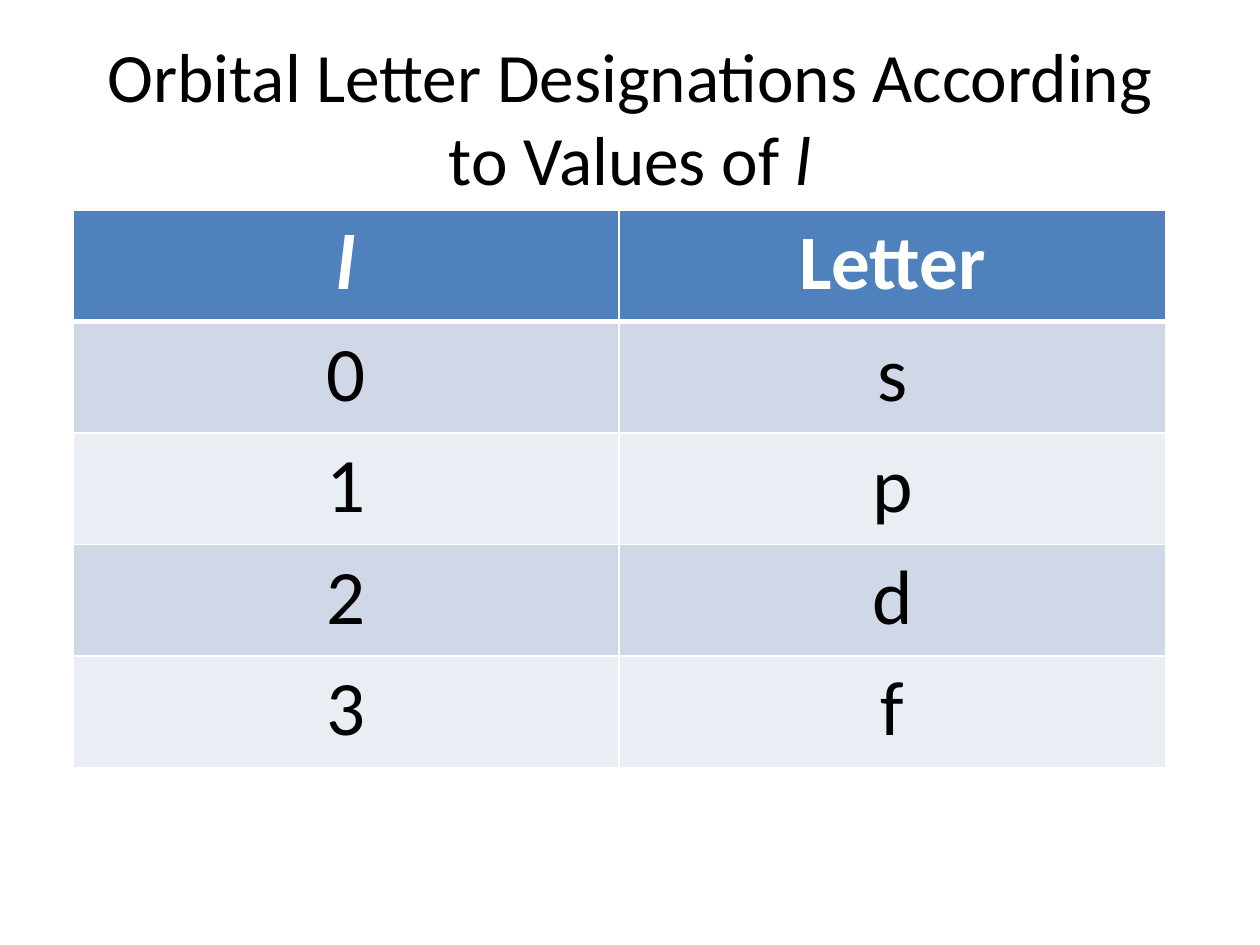
from lxml import etree
from pptx import Presentation
from pptx import util as u
from pptx.dml.color import RGBColor
from pptx.enum import text
from pptx.oxml import ns

WHITE, BLACK, BLUE = "FFFFFF", "000000", "4F81BD"
BANDS = ("D0D8E8", "E9EDF4")
ROWS = [("l", "Letter"), ("0", "s"), ("1", "p"), ("2", "d"), ("3", "f")]


def rgb(value):
    return RGBColor.from_string(value)


def add_text(p, content, size=44, color=BLACK, bold=False, italic=False):
    p.alignment = text.PP_ALIGN.CENTER
    r = p.add_run()
    r.text = content
    r.font.name = "Calibri"
    r.font.size = u.Pt(size)
    r.font.color.rgb = rgb(color)
    r.font.bold = bold
    r.font.italic = italic


def set_borders(cell, color, **widths):
    """Draw the sides L, R, T and B, given in that order, in points."""
    tc_pr = cell._tc.get_or_add_tcPr()
    for i, (side, width) in enumerate(widths.items()):
        ln = etree.Element(ns.qn(f"a:ln{side}"), w=str(u.Pt(width)))
        fill = etree.SubElement(ln, ns.qn("a:solidFill"))
        etree.SubElement(fill, ns.qn("a:srgbClr"), val=color)
        tc_pr.insert(i, ln)


def place_title(s, x, y, w, h):
    title = s.shapes.title
    title.left, title.top, title.width, title.height = x, y, w, h
    tf = title.text_frame
    tf.word_wrap = True
    tf.auto_size = text.MSO_AUTO_SIZE.NONE
    tf.vertical_anchor = text.MSO_ANCHOR.MIDDLE
    p = tf.paragraphs[0]
    add_text(p, "Orbital Letter Designations According to Values of ", size=39.6)
    add_text(p, "l", size=39.6, italic=True)


def place_orbital_table(s, x, y, w, h):
    table = s.shapes.add_table(len(ROWS), len(ROWS[0]), x, y, w, h).table
    for i, row in enumerate(ROWS):
        header = i == 0
        for j, content in enumerate(row):
            cell = table.cell(i, j)
            cell.fill.solid()
            cell.fill.fore_color.rgb = rgb(BLUE if header else BANDS[(i - 1) % 2])
            set_borders(cell, WHITE, L=1, R=1, T=3 if i == 1 else 1, B=3 if header else 1)
            add_text(cell.text_frame.paragraphs[0], content,
                     color=WHITE if header else BLACK, bold=header,
                     italic=header and j == 0)


def main():
    prs = Presentation()
    prs.slide_width, prs.slide_height = u.Inches(10), u.Inches(7.5)
    s = prs.slides.add_slide(prs.slide_layouts[5])
    s.background.fill.solid()
    s.background.fill.fore_color.rgb = rgb(WHITE)
    place_title(s, u.Inches(0.5), u.Inches(0.3), u.Inches(9), u.Inches(1.25))
    place_orbital_table(s, u.Inches(0.58), u.Inches(1.67), u.Inches(8.67), u.Inches(4.42))
    prs.save("out.pptx")


if __name__ == "__main__":
    main()
